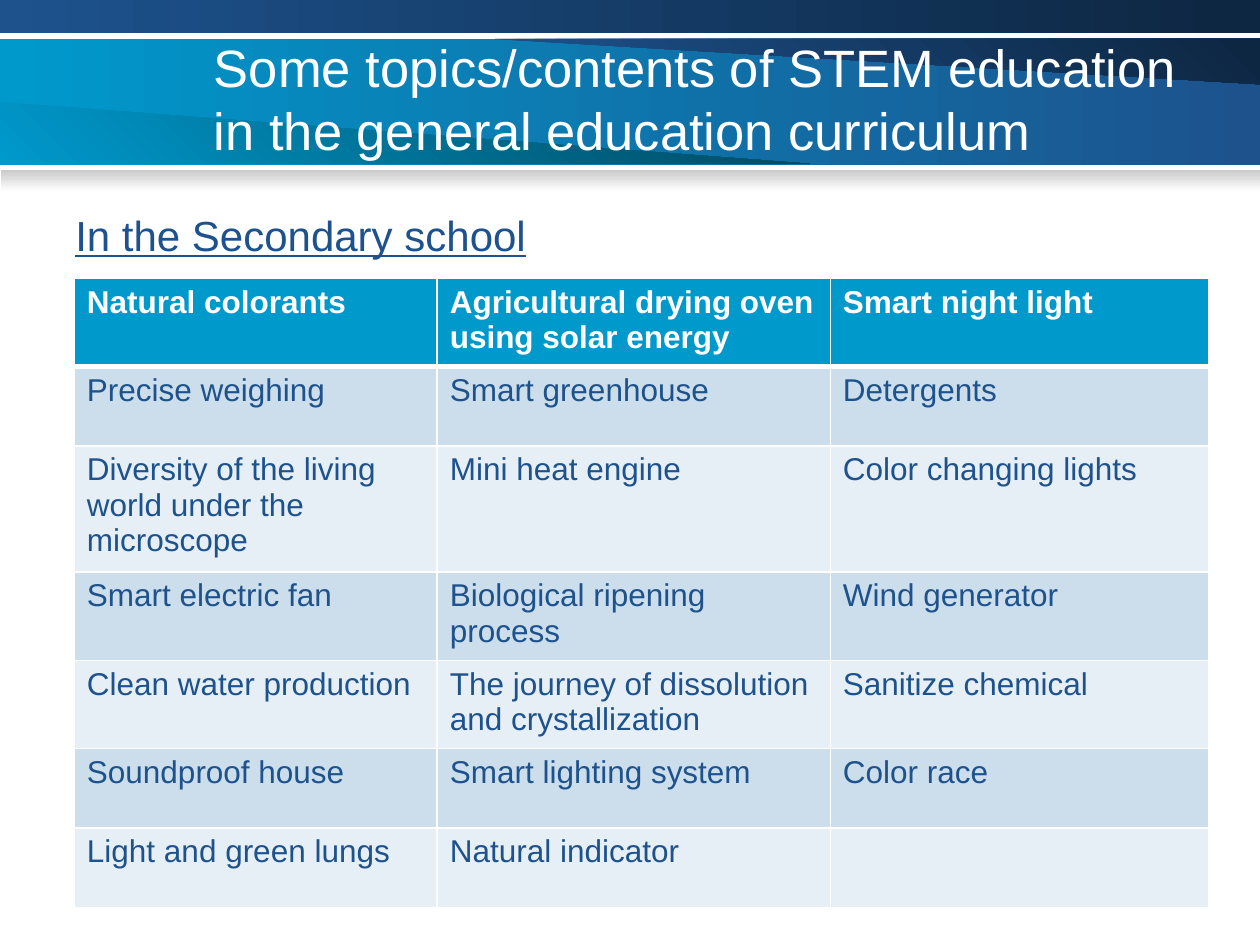
"""Build the slide on STEM topics in the secondary school curriculum."""
import pptx
import pptx.dml.color
import pptx.enum.shapes
import pptx.enum.text
import pptx.oxml.ns
import pptx.util
from lxml import etree
from pptx.util import Inches

COLOURS = {
    "white": "FFFFFF",
    "cyan": "0099CC",
    "blue": "1D528D",
    "navy": "0D2641",
    "teal": "00475E",
    "grey": "CACACA",
    "band": "CCDEEC",
    "pale": "E7EFF6",
}


def paint_gradient(shape, start, end, angle):
    shape.shadow.inherit = False
    shape.line.fill.background()
    shape.fill.gradient()
    shape.fill.gradient_angle = angle
    for stop, name in zip(shape.fill.gradient_stops, (start, end)):
        stop.color.rgb = pptx.dml.color.RGBColor.from_string(COLOURS[name])


def add_span(para, text, size, colour, bold=False, underline=False):
    span = para.add_run()
    span.text = text
    span.font.name = "Arial"
    span.font.size = pptx.util.Pt(size)
    span.font.bold = bold
    span.font.underline = underline
    span.font.color.rgb = pptx.dml.color.RGBColor.from_string(COLOURS[colour])


deck = pptx.Presentation()
deck.slide_width, deck.slide_height = Inches(10), Inches(7.5)
page = deck.slides.add_slide(deck.slide_layouts[6])
shapes = page.shapes

bars = [
    (0, 0.31, 10.01, 1, "cyan", "blue", 0),
    (0, 0, 10, 0.26, "blue", "navy", 0),
    (0.01, 1.35, 9.99, 0.17, "grey", "white", 270),
]
for left, top, width, height, start, end, angle in bars:
    bar = shapes.add_shape(
        pptx.enum.shapes.MSO_SHAPE.RECTANGLE,
        Inches(left), Inches(top), Inches(width), Inches(height),
    )
    paint_gradient(bar, start, end, angle)

wedges = [
    ([(3.93, 0.31), (10.01, 0.67), (10.01, 0.31)], "blue", "navy"),
    ([(6.43, 1.3), (0, 0.81), (0, 1.3)], "cyan", "teal"),
]
for corners, start, end in wedges:
    points = [(Inches(x), Inches(y)) for x, y in corners]
    builder = shapes.build_freeform(*points[0])
    builder.add_line_segments(points[1:], close=True)
    paint_gradient(builder.convert_to_shape(), start, end, 45)

title = shapes.add_textbox(Inches(1.6), Inches(0.53), Inches(8.23), Inches(0.95))
title.text_frame.word_wrap = True
title.text_frame.vertical_anchor = pptx.enum.text.MSO_ANCHOR.MIDDLE
title.text_frame.margin_bottom = Inches(0.5)
add_span(
    title.text_frame.paragraphs[0],
    "Some topics/contents of STEM education in the general education curriculum",
    30, "white",
)

heading = shapes.add_textbox(Inches(0.5), Inches(1.58), Inches(9), Inches(5.41))
heading.text_frame.word_wrap = True
heading.text_frame.margin_top = Inches(0.08)
add_span(heading.text_frame.paragraphs[0], "In the Secondary school", 24, "blue", underline=True)

topics = [
    ("Natural colorants", "Agricultural drying oven using solar energy", "Smart night light"),
    ("Precise weighing", "Smart greenhouse", "Detergents"),
    ("Diversity of the living world under the microscope", "Mini heat engine", "Color changing lights"),
    ("Smart electric fan", "Biological ripening process", "Wind generator"),
    ("Clean water production", "The journey of dissolution and crystallization", "Sanitize chemical"),
    ("Soundproof house", "Smart lighting system", "Color race"),
    ("Light and green lungs", "Natural indicator", ""),
]
table = shapes.add_table(
    len(topics), 3, Inches(0.59), Inches(2.21), Inches(9), Inches(0.63 * len(topics))
).table
for column, width in zip(table.columns, (2.88, 3.12, 3)):
    column.width = Inches(width)

for row, texts in enumerate(topics):
    table.rows[row].height = Inches(0.63)
    header = row == 0
    fill = "cyan" if header else ("pale", "band")[row % 2]
    for col, text in enumerate(texts):
        cell = table.cell(row, col)
        if text:
            add_span(cell.text_frame.paragraphs[0], text, 18, "white" if header else "blue", bold=header)
        else:
            cell.text_frame.paragraphs[0].font.size = pptx.util.Pt(18)
        properties = cell._tc.get_or_add_tcPr()
        for side in ("lnL", "lnR", "lnT", "lnB"):
            thick = (row, side) in ((0, "lnB"), (1, "lnT"))
            border = etree.SubElement(
                properties, pptx.oxml.ns.qn(f"a:{side}"), w=str(pptx.util.Pt(3 if thick else 1))
            )
            solid = etree.SubElement(border, pptx.oxml.ns.qn("a:solidFill"))
            etree.SubElement(solid, pptx.oxml.ns.qn("a:srgbClr"), val=COLOURS["white"])
        cell.fill.solid()
        cell.fill.fore_color.rgb = pptx.dml.color.RGBColor.from_string(COLOURS[fill])

deck.save("out.pptx")
